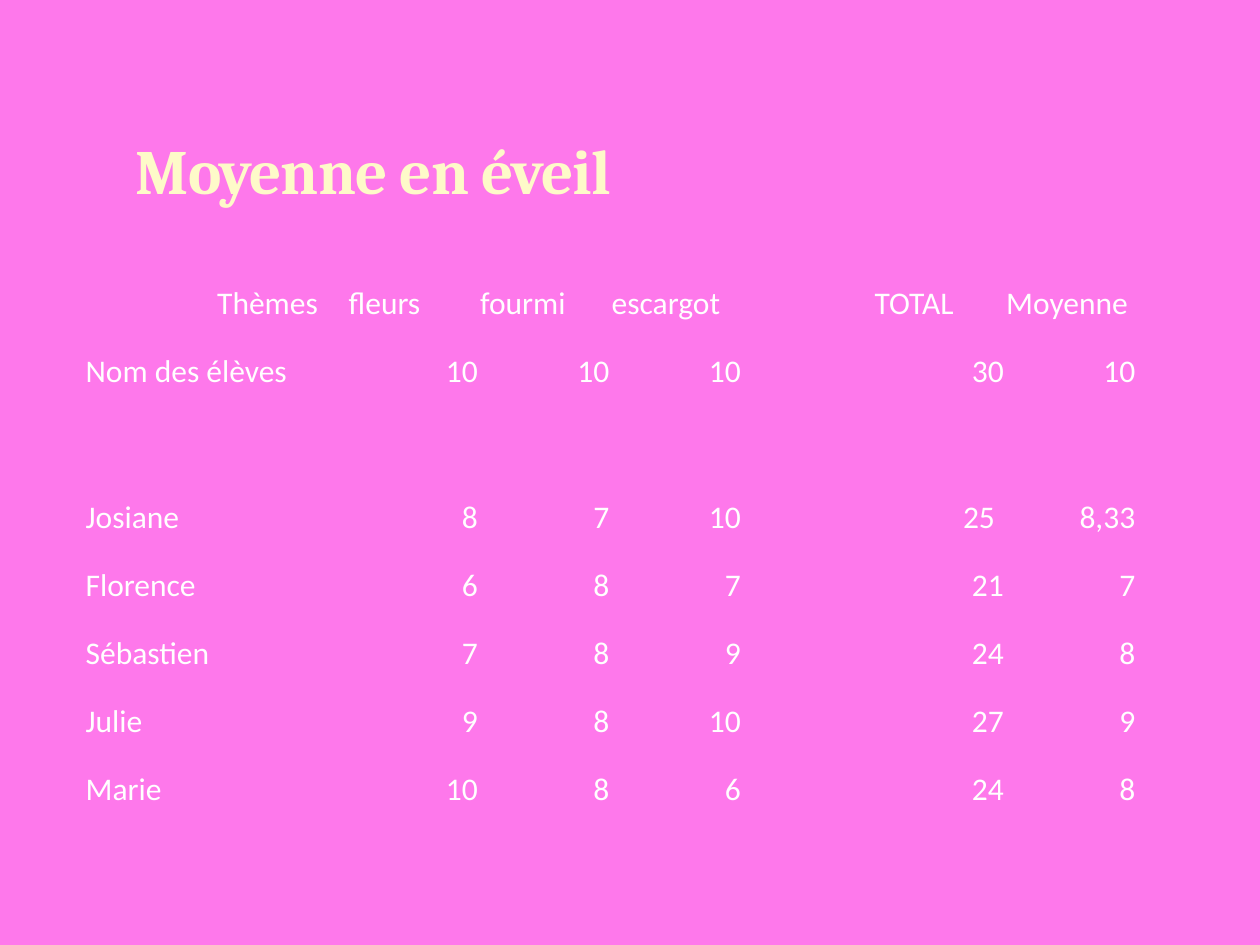
from lxml import etree
from pptx import Presentation
from pptx.dml.color import RGBColor
from pptx.enum.text import MSO_ANCHOR, PP_ALIGN
from pptx.oxml.ns import qn
from pptx.util import Inches, Pt

BOTTOM = MSO_ANCHOR.BOTTOM
LEFT, RIGHT = PP_ALIGN.LEFT, PP_ALIGN.RIGHT
PINK = RGBColor(0xFE, 0x78, 0xEB)
CREAM = RGBColor(0xFE, 0xFA, 0xC9)
WHITE = RGBColor(0xFF, 0xFF, 0xFF)

ROW = 0.54
TALL = 0.62   # row of the first pupil
PAD = 0.01
INDENT = 0.07  # extra space right of the first pupil's total
FIRST, TOTAL = 3, 6

GRADES = [
    ["", "Thèmes", "fleurs", "fourmi", "escargot", "", "TOTAL", "Moyenne"],
    ["Nom des élèves", "", "10", "10", "10", "", "30", "10"],
    [""] * 8,
    ["Josiane", "", "8", "7", "10", "", "25", "8,33"],
    ["Florence", "", "6", "8", "7", "", "21", "7"],
    ["Sébastien", "", "7", "8", "9", "", "24", "8"],
    ["Julie", "", "9", "8", "10", "", "27", "9"],
    ["Marie", "", "10", "8", "6", "", "24", "8"],
]


def add_run(para, text, font, size, color):
    run = para.add_run()
    run.text = text
    run.font.name = font
    run.font.size = Pt(size)
    run.font.color.rgb = color
    return run


def add_title(slide, box, text):
    frame = slide.shapes.add_textbox(*map(Inches, box)).text_frame
    frame.word_wrap = True
    frame.vertical_anchor = BOTTOM
    frame.margin_left = frame.margin_right = frame.margin_top = Inches(0.1)
    frame.margin_bottom = Inches(0.05)
    run = add_run(frame.paragraphs[0], text, "Cambria", 36, CREAM)
    run.font.bold = True
    run.font._element.set("spc", "-50")


def clear_cell(cell):
    """Take away the fill and all four borders."""
    props = cell._tc.get_or_add_tcPr()
    for side in ("lnL", "lnR", "lnT", "lnB"):
        line = etree.SubElement(props, qn(f"a:{side}"))
        etree.SubElement(line, qn("a:noFill"))
    cell.fill.background()


def fill_cell(cell, text, right):
    cell.vertical_anchor = BOTTOM
    cell.margin_left = cell.margin_top = cell.margin_right = Inches(PAD)
    cell.margin_bottom = 0
    para = cell.text_frame.paragraphs[0]
    para.alignment = RIGHT if right else LEFT
    add_run(para, text, "Calibri", 18, WHITE)


def add_grades(slide, box, grades):
    table = slide.shapes.add_table(
        len(grades), len(grades[0]), *map(Inches, box)).table
    table.first_row = table.horz_banding = False
    for col in table.columns:
        col.width = Inches(box[2] / len(grades[0]))
    for r, texts in enumerate(grades):
        table.rows[r].height = Inches(TALL if r == FIRST else ROW)
        for c, text in enumerate(texts):
            cell = table.cell(r, c)
            clear_cell(cell)
            if text:
                fill_cell(cell, text, right=r > 0 and c > 0)
    table.cell(1, 0).merge(table.cell(1, 1))
    table.cell(FIRST, TOTAL).margin_right = Inches(PAD + INDENT)


def main():
    deck = Presentation()
    deck.slide_width, deck.slide_height = Inches(10), Inches(7.5)
    slide = deck.slides.add_slide(deck.slide_layouts[6])
    slide.background.fill.solid()
    slide.background.fill.fore_color.rgb = PINK
    add_title(slide, (0.98, 0.52, 8.52, 1.17), "Moyenne en éveil")
    add_grades(slide, (0.67, 2.02, 8.35, 4.4), GRADES)
    deck.save("out.pptx")


if __name__ == "__main__":
    main()
